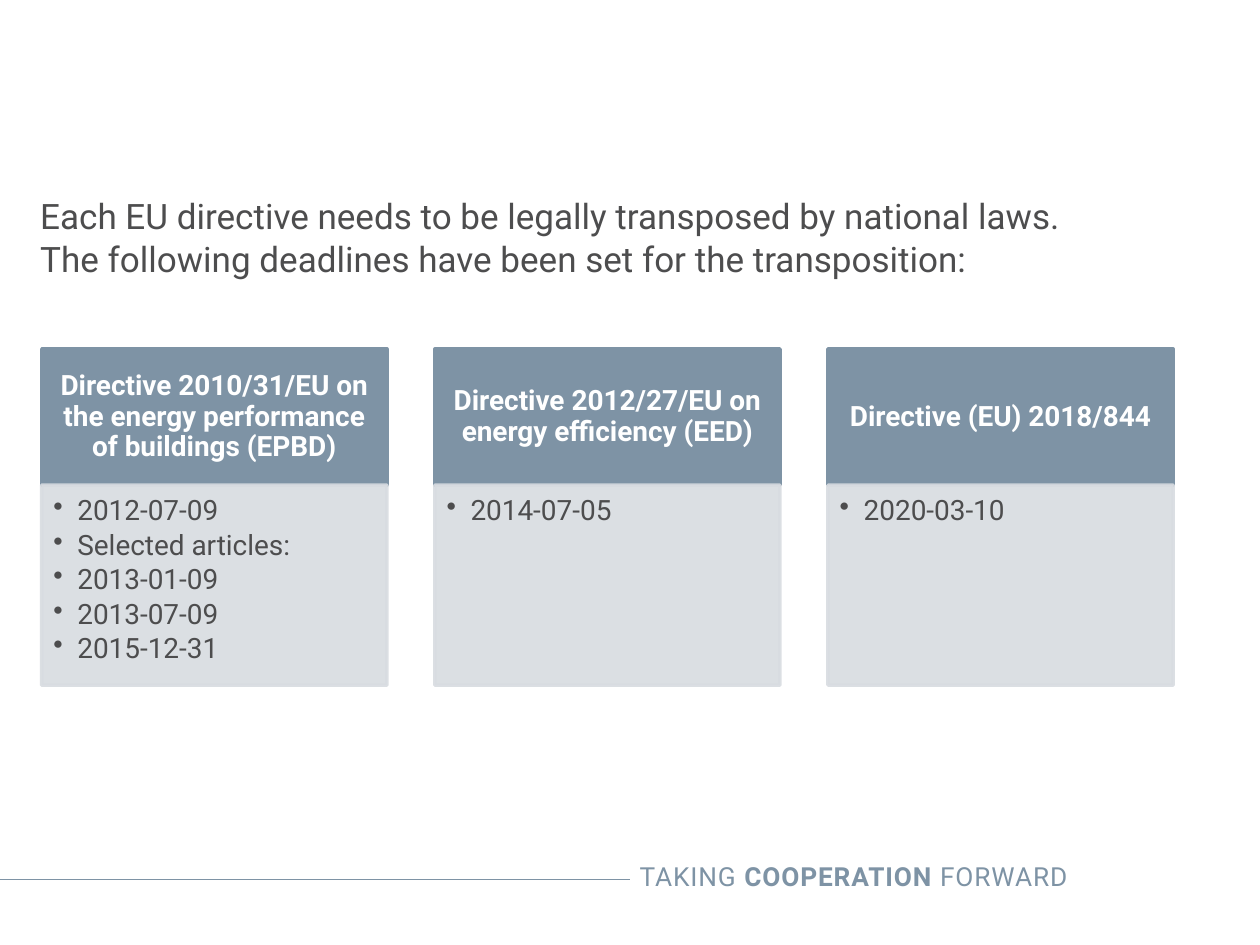
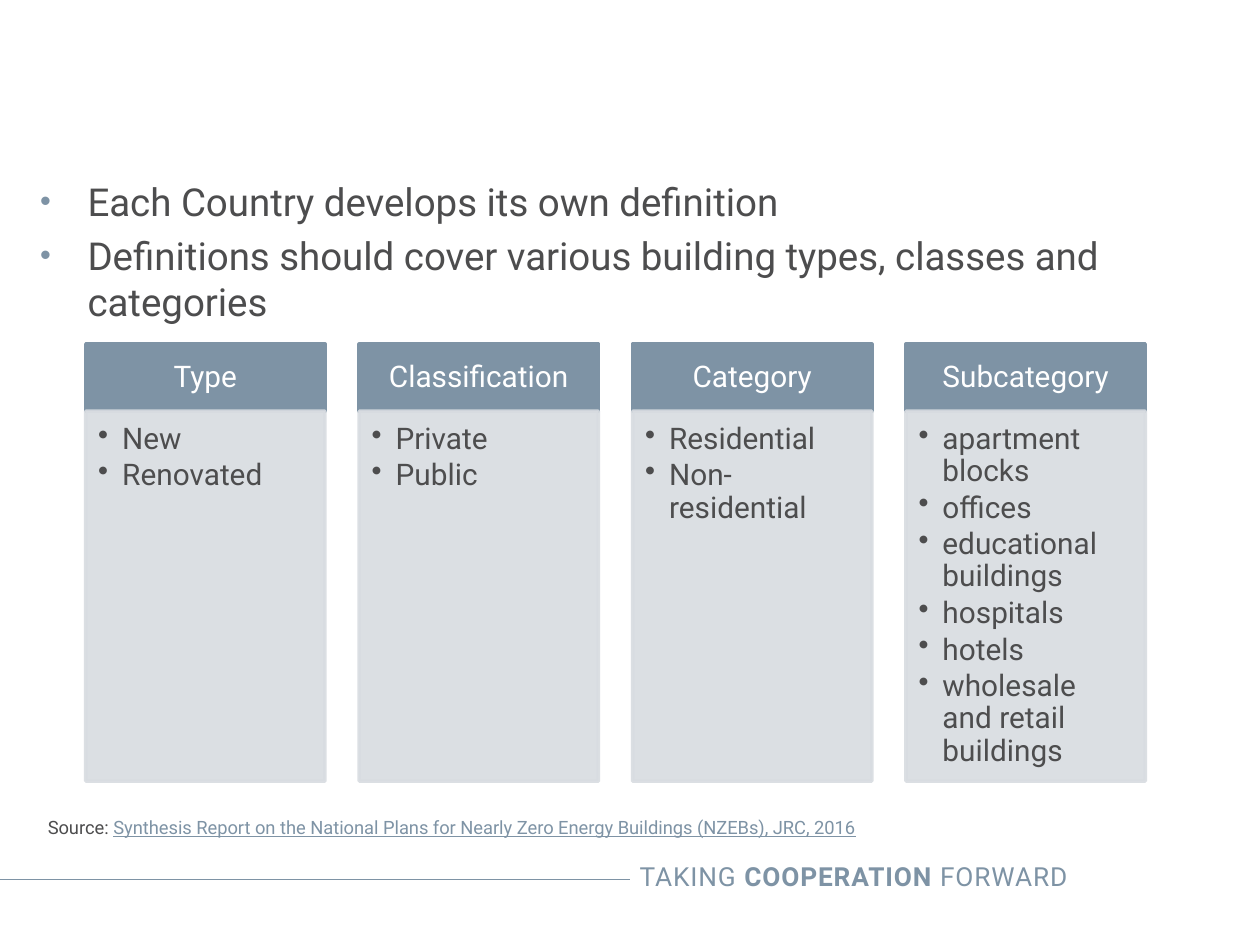
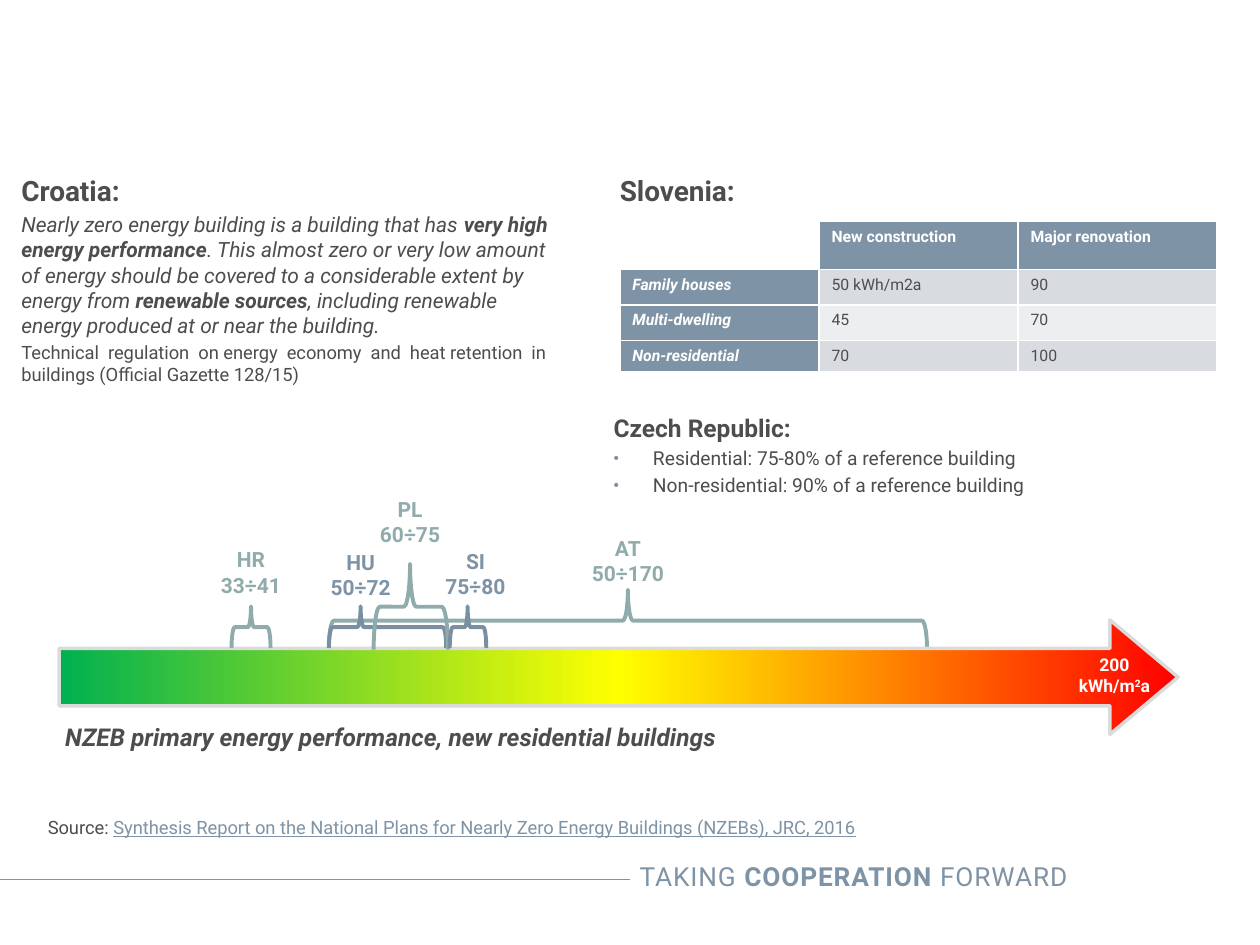
from collections import namedtuple

from lxml import etree
from pptx import Presentation
from pptx.dml.color import RGBColor
from pptx.enum import shapes, text
from pptx.oxml.ns import qn
from pptx.util import Pt

COLORS = {
    "slate": "7E93A5", "brace": "7A90A2", "sage": "90ABAB", "text": "4D4D4E",
    "panel": "D8DCE1", "band": "ECEEF0", "edge": "DBDBDC", "white": "FFFFFF",
    "green": "00B050", "yellow": "FFFF00", "red": "FF0000",
}
FONT = "Roboto"
CENTER = text.PP_ALIGN.CENTER
SHAPE = shapes.MSO_SHAPE

Box = namedtuple("Box", "left top width height")
Country = namedtuple("Country", "code values brace tip color label_color label_top label_width shift")

LIST_MARK = "slate"
SOURCE_BOX = Box(20.2, 463, 541.4, 20.2)
SOURCE = "Synthesis Report on the National Plans for Nearly Zero Energy Buildings (NZEBs), JRC, 2016"


def rgb(name):
    return RGBColor.from_string(COLORS[name])


def pts(box):
    return [Pt(round(v, 2)) for v in box]


def sub(parent, tag, **attrs):
    return etree.SubElement(parent, qn(tag), attrs)


def set_bullet(p, indent, mark):
    """Hang the paragraph on a bullet; an indent of 0 switches the bullet off."""
    pPr = p._p.get_or_add_pPr()
    pPr.set("marL", str(Pt(indent)))
    pPr.set("indent", str(-Pt(indent)))
    if not indent:
        sub(pPr, "a:buNone")
        return
    if mark:
        sub(sub(pPr, "a:buClr"), "a:srgbClr", val=COLORS[mark])
        sub(pPr, "a:buSzPct", val="80000")
    sub(pPr, "a:buChar", char="•")


def add_para(tf, content, size, color="text", bold=False, italic=False, align=None,
             before=0, after=0, spacing=None, indent=0, mark=None):
    """Add a paragraph; content is a string or a list of (text, run format) pairs."""
    first = not tf.text
    p = tf.paragraphs[0] if first else tf.add_paragraph()
    p.alignment = align
    p.line_spacing = spacing
    p.space_before = Pt(0 if first else before)
    p.space_after = Pt(after)
    set_bullet(p, indent, mark)
    font = p.font
    font.name, font.size, font.bold, font.italic = FONT, Pt(size), bold, italic
    font.color.rgb = rgb(color)
    for words, style in [(content, {})] if isinstance(content, str) else content:
        r = p.add_run()
        r.text = words
        for key, value in style.items():
            if key == "color":
                r.font.color.rgb = rgb(value)
            elif key in ("bold", "underline"):
                setattr(r.font, key, value)
            else:
                r._r.get_or_add_rPr().set(key, value)


def set_frame(tf, insets, anchor=text.MSO_ANCHOR.TOP):
    tf.word_wrap = True
    tf.auto_size = text.MSO_AUTO_SIZE.NONE
    tf.vertical_anchor = anchor
    tf.margin_left, tf.margin_top, tf.margin_right, tf.margin_bottom = pts(insets)
    return tf


def add_textbox(s, box, insets=(7.2, 3.6, 7.2, 3.6)):
    return set_frame(s.shapes.add_textbox(*pts(box)).text_frame, insets)


def body(s, idx, box):
    ph = s.placeholders[idx]
    ph.left, ph.top, ph.width, ph.height = pts(box)
    return set_frame(ph.text_frame, (0, 0, 0, 0))


def add_panel(s, box, color, alpha=100):
    sp = s.shapes.add_shape(SHAPE.RECTANGLE, *pts(box))
    sp.shadow.inherit = False
    sp.fill.solid()
    sp.fill.fore_color.rgb = sp.line.color.rgb = rgb(color)
    sp.line.width = Pt(2)
    if alpha < 100:
        for clr in sp.element.spPr.iter(qn("a:srgbClr")):
            sub(clr, "a:alpha", val=str(alpha * 1000))
    return sp


def add_columns(s, box, columns, gap, head_height, size, bold=False):
    """Equal columns, each a heading above a bulleted panel."""
    width = (box.width - gap * (len(columns) - 1)) / len(columns)
    side, thin, top, bottom = (size * k for k in (0.56, 0.32, 0.42, 0.63))
    for i, (heading, items) in enumerate(columns):
        left = box.left + i * (width + gap)
        head = add_panel(s, (left, box.top, width, head_height), "slate")
        tf = set_frame(head.text_frame, (side, thin, side, thin), text.MSO_ANCHOR.MIDDLE)
        add_para(tf, heading, size, "white", bold, align=CENTER, spacing=0.9)
        panel = add_panel(s, (left, box.top + head_height, width, box.height - head_height),
                          "panel", alpha=90)
        tf = set_frame(panel.text_frame, (top, top, side, bottom))
        for item in items:
            add_para(tf, item, size, align=text.PP_ALIGN.LEFT, spacing=0.9,
                     after=size * 0.15, indent=13.7)


def add_source(s, box):
    add_para(add_textbox(s, box),
             [("Source: ", {}), (SOURCE, {"color": "slate", "underline": True})], 10.5)


def add_master_footer(prs, s):
    """Draw rule and motto on a slide, then move them to the slide master."""
    rule = s.shapes.add_connector(shapes.MSO_CONNECTOR.STRAIGHT, *pts((-0.7, 502.6, 360, 502.6)))
    rule.line.color.rgb = rgb("slate")
    rule.line.width = Pt(0.75)
    sub(rule.element.spPr, "a:effectLst")
    motto = s.shapes.add_textbox(*pts((279.4, 488.2, 337.7, 25.2)))
    add_para(set_frame(motto.text_frame, (7.2, 3.6, 7.2, 3.6)),
             [("TAKING ", {"spc": "50"}), ("COOPERATION", {"spc": "50", "bold": True}),
              (" FORWARD", {"spc": "50"})], 15, "slate", align=text.PP_ALIGN.RIGHT)
    for sp in (rule, motto):
        prs.slide_master.shapes.element.append(sp.element)


def add_limits_table(s, box):
    rows = [("", "New construction", "Major renovation"),
            ("Family houses", "50 kWh/m2a", "90"),
            ("Multi-dwelling", "45", "70"),
            ("Non-residential", "70", "100")]
    table = s.shapes.add_table(len(rows), len(rows[0]), *pts(box)).table
    table.first_col = True
    for row, height in zip(table.rows, (18, 20.2, 20.2, 18)):
        row.height = Pt(height)
    for i, row in enumerate(rows):
        for j, words in enumerate(row):
            cell = table.cell(i, j)
            label = i == 0 or j == 0
            if words:
                cell.fill.solid()
                cell.fill.fore_color.rgb = rgb("slate" if label else "panel" if i % 2 else "band")
            else:
                cell.fill.background()
            add_para(cell.text_frame, words, 9, "white" if label else "text",
                     bold=label, italic=i > 0 and j == 0)


def add_brace(s, box, tip, color):
    """A brace that opens downwards and fills the box, its tip at a share of the width."""
    left = box.left + (box.width - box.height) / 2
    top = box.top - (box.width - box.height) / 2
    sp = s.shapes.add_shape(SHAPE.RIGHT_BRACE, *pts((left, top, box.height, box.width)))
    sp.rotation = 270
    sp.adjustments[1] = tip
    sp.shadow.inherit = False
    sp.fill.background()
    sp.line.color.rgb = rgb(color)
    sp.line.width = Pt(2.25)


def add_country(s, box, c):
    brace = c.brace._replace(left=box.left + c.brace.left, top=box.top + c.brace.top)
    add_brace(s, brace, c.tip, c.color)
    middle = brace.left + c.tip * brace.width + c.shift
    tf = add_textbox(s, (middle - c.label_width / 2, box.top + c.label_top, c.label_width, 35.3),
                     (5.8, 2.9, 5.8, 2.9))
    for line in (c.code, c.values):
        add_para(tf, line, 12, c.label_color, bold=True, align=CENTER)


def add_arrow(s, box):
    sp = s.shapes.add_shape(SHAPE.RIGHT_ARROW, *pts(box))
    sp.adjustments[1] = 0.595
    sp.shadow.inherit = False
    sp.line.color.rgb = rgb("edge")
    sp.line.width = Pt(2)
    sp.fill.gradient()
    sp.fill.gradient_angle = 0
    stops = sp.element.spPr.find(qn("a:gradFill")).find(qn("a:gsLst"))
    for stop in list(stops):
        stops.remove(stop)
    for pos, color in ((0, "green"), (50, "yellow"), (100, "red")):
        sub(sub(stops, "a:gs", pos=str(pos * 1000)), "a:srgbClr", val=COLORS[color])


def add_energy_scale(s, box):
    add_country(s, box, Country("AT", "50÷170", Box(154, 56.2, 342, 35.3), 0.5,
                                "sage", "sage", 22.3, 57.6, 0))
    add_arrow(s, (box.left, box.top + 73.4, box.width, 65.5))
    for country in (
        Country("HR", "33÷41", Box(98.5, 65.7, 22.3, 23.8), 0.5, "sage", "sage", 28.8, 49.7, 0),
        Country("HU", "50÷72", Box(154.2, 65.7, 67, 23.8), 0.27, "brace", "slate", 30.2, 49.7, 0),
        Country("PL", "60÷75", Box(179.7, 41.4, 42.5, 49), 0.49, "sage", "sage", 0, 49.7, 0),
        Country("SI", "75÷80", Box(223.2, 65.7, 20.9, 23.8), 0.49, "brace", "slate", 29.5, 49.7, 4.5),
    ):
        add_country(s, box, country)
    tf = add_textbox(s, (box.left + 571.7, box.top + 90, 62.6, 30.2), (5.8, 2.9, 5.8, 2.9))
    add_para(tf, [("200 kWh/m", {}), ("2", {"baseline": "30000"}), ("a", {})],
             10, "white", bold=True, align=CENTER)
    tf = add_textbox(s, (box.left - 3.6, box.top + 128.2, 522, 24.5))
    add_para(tf, "NZEB primary energy performance, new residential buildings", 14,
             bold=True, italic=True)


def add_slide(prs, layout):
    return prs.slides.add_slide(prs.slide_layouts[layout])


def drop_empty_placeholders(s):
    for ph in list(s.placeholders):
        if not ph.text_frame.text:
            ph.element.getparent().remove(ph.element)


def deadlines_slide(prs):
    s = add_slide(prs, 1)
    tf = body(s, 1, (23, 110.9, 656, 70))
    for line in ("Each EU directive needs to be legally transposed by national laws.",
                 "The following deadlines have been set for the transposition:"):
        add_para(tf, line, 20, before=1)
    add_columns(s, Box(23.8, 199.4, 646.6, 192.2), [
        ("Directive 2010/31/EU on the energy performance of buildings (EPBD)",
         ["2012-07-09", "Selected articles:", "2013-01-09", "2013-07-09", "2015-12-31"]),
        ("Directive 2012/27/EU on energy efficiency (EED)", ["2014-07-05"]),
        ("Directive (EU) 2018/844", ["2020-03-10"]),
    ], gap=27.4, head_height=77.8, size=16, bold=True)
    return s


def definitions_slide(prs):
    s = add_slide(prs, 1)
    tf = body(s, 1, (23, 101.5, 674, 90))
    for line in ("Each Country develops its own definition",
                 "Definitions should cover various building types, classes and categories"):
        add_para(tf, line, 22, before=4.4, indent=27, mark=LIST_MARK)
    add_columns(s, Box(49, 196.6, 605.5, 249.8), [
        ("Type", ["New", "Renovated"]),
        ("Classification", ["Private", "Public"]),
        ("Category", ["Residential", "Non-residential"]),
        ("Subcategory", ["apartment blocks", "offices", "educational buildings", "hospitals",
                         "hotels", "wholesale and retail buildings"]),
    ], gap=19.5, head_height=38.4, size=17)
    add_source(s, SOURCE_BOX)
    return s


def countries_slide(prs):
    s = add_slide(prs, 4)
    tf = body(s, 1, (12.2, 99.4, 309.6, 141))
    add_para(tf, "Croatia:", 16, bold=True)
    add_para(tf, [
        ("Nearly zero energy building is a building that has ", {}),
        ("very high energy performance", {"bold": True}),
        (". This almost zero or very low amount of energy should be covered to a considerable "
         "extent by energy from ", {}),
        ("renewable sources", {"bold": True}),
        (", including renewable energy produced at or near the building.", {}),
    ], 12, italic=True, before=2.4)
    add_para(tf, "Technical  regulation  on energy  economy  and  heat retention  in  "
                 "buildings (Official Gazette 128/15)", 10.5, before=2.1)
    add_para(body(s, 3, (354.2, 99.4, 365.8, 21.6)), "Slovenia:", 16, bold=True)
    tf = body(s, 4, (350.6, 236.2, 365.8, 50))
    add_para(tf, "Czech Republic:", 14, bold=True)
    for line in ("Residential: 75-80% of a reference building",
                 "Non-residential: 90% of a reference building"):
        add_para(tf, line, 11, before=2.2, indent=22.5, mark=LIST_MARK)
    add_limits_table(s, Box(354.2, 126.7, 341.3, 76.4))
    add_energy_scale(s, Box(33.8, 280.8, 639.4, 152.7))
    add_source(s, SOURCE_BOX)
    return s


def main():
    prs = Presentation()
    prs.slide_width, prs.slide_height = Pt(720), Pt(540)
    for build in (deadlines_slide, definitions_slide, countries_slide):
        drop_empty_placeholders(build(prs))
    add_master_footer(prs, prs.slides[0])
    prs.save("out.pptx")


if __name__ == "__main__":
    main()
